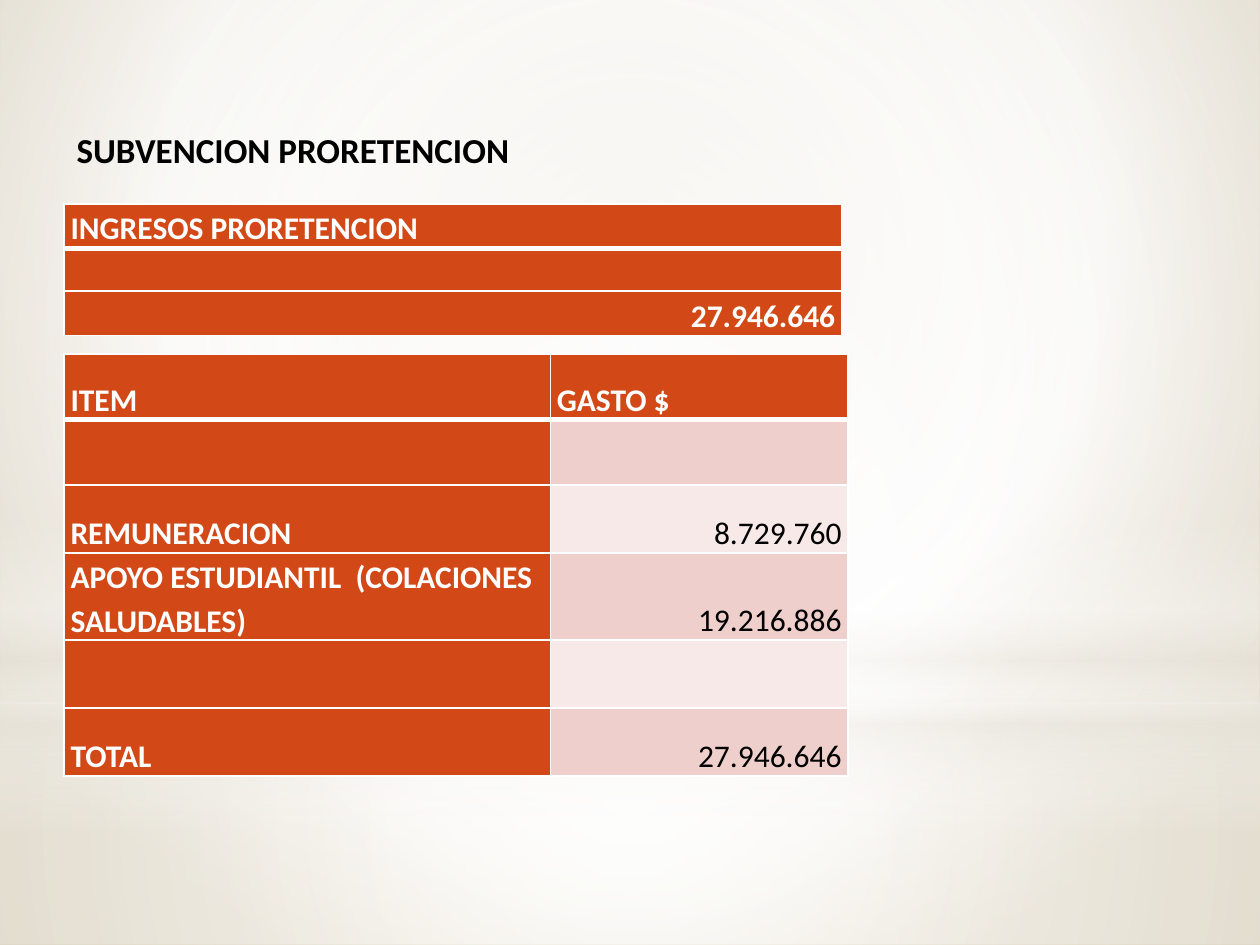
"""Build the SUBVENCION PRORETENCION slide with its income and expense tables."""
from lxml.etree import SubElement
from pptx import Presentation
from pptx.dml.color import RGBColor
from pptx.enum.shapes import MSO_SHAPE
from pptx.enum.text import MSO_ANCHOR, PP_ALIGN
from pptx.oxml import parse_xml
from pptx.oxml.ns import nsdecls, qn
from pptx.util import Inches, Pt

COLORS = {"white": "FFFFFF", "black": "000000", "orange": "D34817", "rose": "EFCFCC",
          "pale": "F7E9E8", "cream": "E9E5DC", "sand": "E3DDCF", "tan": "CDBF9F"}

TITLE = "SUBVENCION PRORETENCION"
TABLES = [
    {"at": (0.51, 1.62), "cols": [6.17], "rows": [0.34, 0.34, 0.35],
     "text": [["INGRESOS PRORETENCION"], [""], ["27.946.646"]]},
    {"at": (0.51, 2.81), "cols": [3.86, 2.36], "rows": [0.52, 0.52, 0.54, 0.69, 0.54, 0.54],
     "text": [["ITEM", "GASTO $"], ["", ""], ["REMUNERACION", "8.729.760"],
              ["APOYO ESTUDIANTIL  (COLACIONES SALUDABLES)", "19.216.886"],
              ["", ""], ["TOTAL", "27.946.646"]]},
]

CENTER = (50, 50, 50, 50)
BACKGROUND = [(0, "sand", 100), (60, "white", 100), (100, "tan", 100)]
LAYERS = [
    (MSO_SHAPE.RECTANGLE, (0, 5.58, 10, 1.92), CENTER,
     [(0, "white", 91), (37, "white", 76), (100, "cream", 79)]),
    (MSO_SHAPE.RECTANGLE, (0, 0, 10, 5.58), CENTER,
     [(0, "white", 89), (48, "white", 62), (100, "cream", 79)]),
    (MSO_SHAPE.RECTANGLE, (0, 4.12, 10, 2.5), None,
     [(0, "white", 0), (29, "white", 30), (45, "cream", 40), (55, "white", 26),
      (65, "cream", 60), (100, "white", 0)]),
    (MSO_SHAPE.OVAL, (0, 1.75, 10, 5.58), CENTER, [(0, "white", 100), (56, "white", 0)]),
]


def rgb(name):
    return RGBColor.from_string(COLORS[name])


def set_gradient(fill, parent, stops, focus):
    fill.solid()
    solid = next(parent.iter(qn("a:solidFill")))
    grad = parse_xml(f'<a:gradFill {nsdecls("a")} rotWithShape="1"/>')
    stop_list = SubElement(grad, qn("a:gsLst"))
    for pos, name, alpha in stops:
        stop = SubElement(stop_list, qn("a:gs"), pos=str(pos * 1000))
        color = SubElement(stop, qn("a:srgbClr"), val=COLORS[name])
        if alpha < 100:
            SubElement(color, qn("a:alpha"), val=str(alpha * 1000))
    if focus:
        shade = SubElement(grad, qn("a:path"), path="circle")
        sides = {k: str(v * 1000) for k, v in zip("ltrb", focus)}
        SubElement(shade, qn("a:fillToRect"), **sides)
    else:
        SubElement(grad, qn("a:lin"), ang="5400000", scaled="0")
    solid.getparent().replace(solid, grad)


def write(p, text, size, color, bold):
    r = p.add_run()
    r.text = text
    r.font.color.rgb = rgb(color)
    for key, value in {"name": "Calibri", "size": Pt(size), "bold": bold}.items():
        setattr(r.font, key, value)


def set_borders(cell, widths):
    props = cell._tc.get_or_add_tcPr()
    for i, (side, width) in enumerate(widths.items()):
        props.insert(i, parse_xml(
            f'<a:ln{side} {nsdecls("a")} w="{Pt(width)}"><a:solidFill>'
            f'<a:srgbClr val="{COLORS["white"]}"/></a:solidFill></a:ln{side}>'))


def add_table(s, data):
    cols, rows = data["cols"], data["rows"]
    box = [Inches(v) for v in (*data["at"], sum(cols), sum(rows))]
    table = s.shapes.add_table(len(rows), len(cols), *box).table
    for parts, key, sizes in ((table.columns, "width", cols), (table.rows, "height", rows)):
        for part, size in zip(parts, sizes):
            setattr(part, key, Inches(size))
    layout = {"vertical_anchor": MSO_ANCHOR.BOTTOM, "margin_left": Inches(0.05),
              "margin_right": Inches(0.05), "margin_top": 0, "margin_bottom": 0}
    for i, texts in enumerate(data["text"]):
        for j, text in enumerate(texts):
            cell = table.cell(i, j)
            for key, value in layout.items():
                setattr(cell, key, value)
            heading = i == 0 or j == 0
            cell.fill.solid()
            cell.fill.fore_color.rgb = rgb("orange" if heading else ("pale", "rose")[i % 2])
            set_borders(cell, {"L": 1, "R": 1, "T": 3 if i == 1 else 1, "B": 3 if i == 0 else 1})
            p = cell.text_frame.paragraphs[0]
            p.line_spacing = 1.15
            p.alignment = PP_ALIGN.RIGHT if text[:1].isdigit() else PP_ALIGN.LEFT
            if text:
                write(p, text, 18, "white" if heading else "black", heading)


def main():
    prs = Presentation()
    prs.slide_width, prs.slide_height = Inches(10), Inches(7.5)
    s = prs.slides.add_slide(prs.slide_layouts[6])
    set_gradient(s.background.fill, s._element, BACKGROUND, (20, 10, 20, 60))
    for kind, box, focus, stops in LAYERS:
        sp = s.shapes.add_shape(kind, *[Inches(v) for v in box])
        sp.shadow.inherit = False
        sp.line.fill.background()
        set_gradient(sp.fill, sp._element.spPr, stops, focus)
    add_table(s, TABLES[0])
    tf = s.shapes.add_textbox(*[Inches(v) for v in (0.51, 0.97, 4.33, 0.77)]).text_frame
    tf.word_wrap = True
    tf.paragraphs[0].alignment = PP_ALIGN.JUSTIFY
    write(tf.paragraphs[0], TITLE, 20, "black", True)
    add_table(s, TABLES[1])
    prs.save("out.pptx")


if __name__ == "__main__":
    main()
